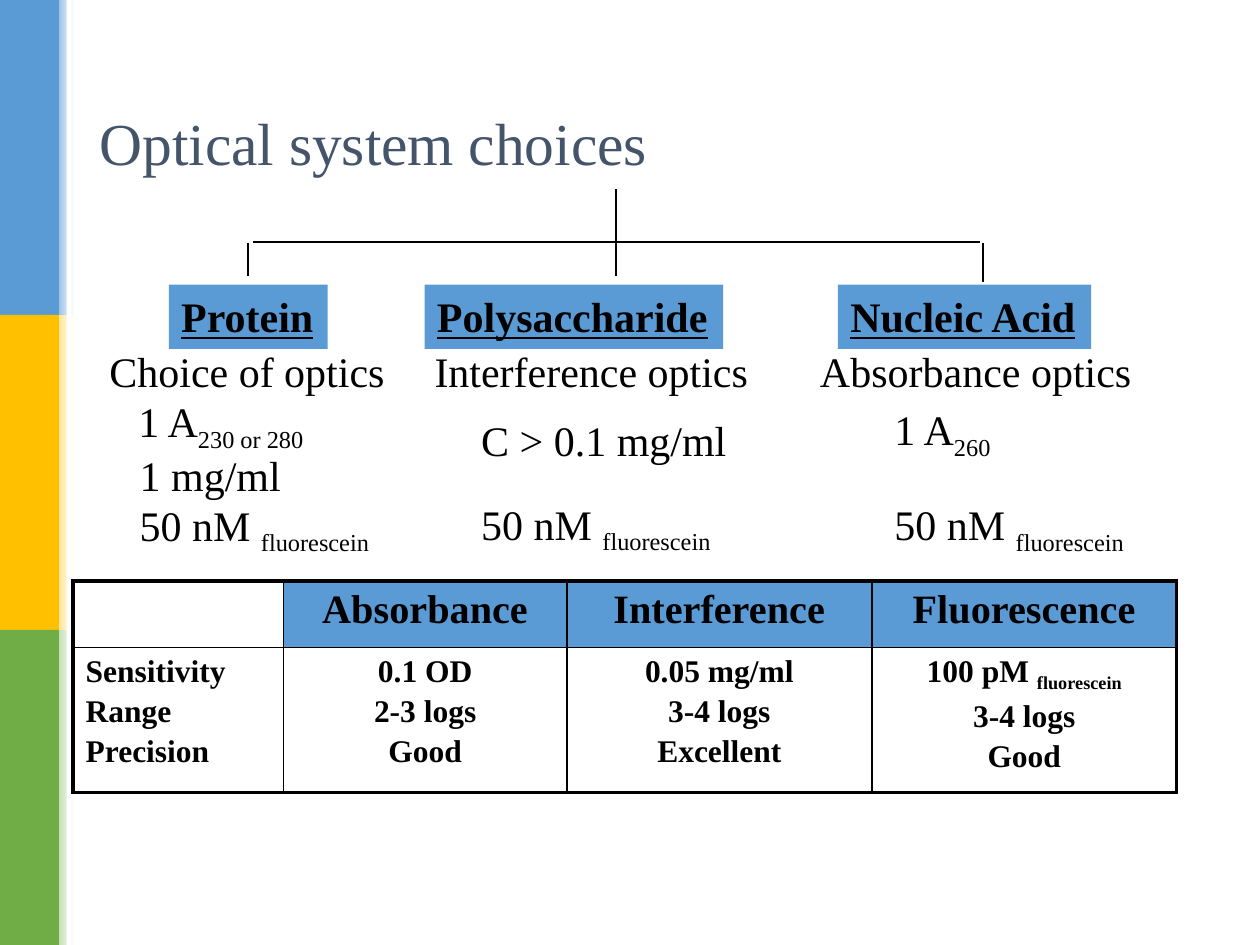
from lxml import etree
from pptx import Presentation
from pptx.dml.color import RGBColor
from pptx.enum import shapes, text
from pptx.oxml import ns

PX = 9144
FONT = "Times New Roman"
BLACK = RGBColor(0x00, 0x00, 0x00)
WHITE = RGBColor(0xFF, 0xFF, 0xFF)
SLATE = RGBColor(0x44, 0x54, 0x6A)
BLUE = RGBColor(0x5B, 0x9B, 0xD5)
YELLOW = RGBColor(0xFF, 0xC0, 0x00)
GREEN = RGBColor(0x70, 0xAD, 0x47)
PALE_BLUE = RGBColor(0x9D, 0xC3, 0xE6)
PALE_YELLOW = RGBColor(0xFF, 0xE6, 0x99)
PALE_GREEN = RGBColor(0xC5, 0xE0, 0xB4)


def write_lines(frame, lines, size, color=BLACK, bold=False, underline=False,
                align=text.PP_ALIGN.LEFT, spacing=1.0, gap=0):
    for index, line in enumerate(lines):
        paragraph = frame.add_paragraph() if index else frame.paragraphs[0]
        paragraph.alignment = align
        paragraph.line_spacing = spacing
        if index:
            paragraph.space_before = gap * 12700
        paragraph.font.name = FONT
        paragraph.font.size = size * 12700
        paragraph.font.bold = bold
        paragraph.font.underline = underline
        paragraph.font.color.rgb = color
        base, _, subscript = line.partition("_")
        paragraph.add_run().text = base
        if subscript:
            run = paragraph.add_run()
            run.text = subscript
            run.font._element.set("baseline", "-25000")


def add_box(left, top, width, height, fill=None):
    box = slide.shapes.add_shape(shapes.MSO_SHAPE.RECTANGLE,
                                 left * PX, top * PX, width * PX, height * PX)
    box.shadow.inherit = False
    box.line.fill.background()
    if fill is not None:
        box.fill.solid()
        box.fill.fore_color.rgb = fill
    return box


presentation = Presentation()
presentation.slide_width = 1000 * PX
presentation.slide_height = 750 * PX
slide = presentation.slides.add_slide(presentation.slide_layouts[5])

for row, (color, pale) in enumerate([(BLUE, PALE_BLUE), (YELLOW, PALE_YELLOW), (GREEN, PALE_GREEN)]):
    add_box(0, row * 250, 47, 250, color)
    fade = add_box(47, row * 250, 12, 250)
    fade.fill.gradient()
    fade.fill.gradient_angle = 0
    for stop, shade, position in zip(fade.fill.gradient_stops, (pale, WHITE), (0, 1)):
        stop.color.rgb = shade
        stop.position = position
add_box(53, 0, 4, 750, WHITE)

title = slide.shapes.title
title.left, title.top, title.width, title.height = 69 * PX, 40 * PX, 862 * PX, 145 * PX
title.text_frame.auto_size = text.MSO_AUTO_SIZE.NONE
title.text_frame.vertical_anchor = text.MSO_ANCHOR.MIDDLE
write_lines(title.text_frame, ["Optical system choices"], 34, SLATE)

branches = [
    (489, 150, 489, 200), (489, 200, 489, 219), (201, 192, 489, 192),
    (489, 192, 778, 192), (197, 193, 197, 219), (780, 193, 780, 224),
]
for ends in branches:
    connector = slide.shapes.add_connector(shapes.MSO_CONNECTOR.STRAIGHT, *[end * PX for end in ends])
    connector.line.color.rgb = BLACK
    connector.line.width = 12700
    etree.SubElement(connector._element.spPr, ns.qn("a:effectLst"))

for name, left, width in [("Protein", 134, 126), ("Polysaccharide", 337, 237), ("Nucleic Acid", 665, 201)]:
    heading = add_box(left, 226, width, 51, BLUE)
    heading.text_frame.word_wrap = False
    heading.text_frame.vertical_anchor = text.MSO_ANCHOR.TOP
    write_lines(heading.text_frame, [name], 24, bold=True, underline=True)

notes = [
    (77, 269, 241, 51, ["Choice of optics"], 1.0, 0),
    (335, 269, 271, 51, ["Interference optics"], 1.0, 0),
    (641, 269, 270, 51, ["Absorbance optics"], 1.0, 0),
    (100, 309, 165, 51, ["1 A_230 or 280"], 1.0, 0),
    (101, 356, 218, 83, ["1 mg/ml", "50 nM _fluorescein"], 0.9, 0),
    (372, 332, 218, 107, ["C > 0.1 mg/ml", "50 nM _fluorescein"], 0.8, 22),
    (700, 316, 218, 119, ["1 A_260", "50 nM _fluorescein"], 0.9, 25),
]
for left, top, width, height, lines, spacing, gap in notes:
    note = slide.shapes.add_textbox(left * PX, top * PX, width * PX, height * PX)
    note.text_frame.word_wrap = False
    write_lines(note.text_frame, lines, 24, spacing=spacing, gap=gap)

rows = [
    [[], ["Absorbance"], ["Interference"], ["Fluorescence"]],
    [["Sensitivity", "Range", "Precision"], ["0.1 OD", "2-3 logs", "Good"],
     ["0.05 mg/ml", "3-4 logs", "Excellent"], ["100 pM _fluorescein", "3-4 logs", "Good"]],
]
widths, heights = [167, 225, 242, 242], [53, 115]
table = slide.shapes.add_table(2, 4, 58 * PX, 461 * PX, sum(widths) * PX, sum(heights) * PX).table
table.first_row = table.horz_banding = False
for column, width in zip(table.columns, widths):
    column.width = width * PX
for r, cells in enumerate(rows):
    table.rows[r].height = heights[r] * PX
    for c, lines in enumerate(cells):
        cell = table.cell(r, c)
        if r == 0 and c > 0:
            cell.fill.solid()
            cell.fill.fore_color.rgb = BLUE
        else:
            cell.fill.background()
        align = text.PP_ALIGN.CENTER if c else text.PP_ALIGN.LEFT
        write_lines(cell.text_frame, lines, 18 if r else 23, bold=True, align=align, gap=3)
        properties = cell._tc.get_or_add_tcPr()
        outer_edges = [("a:lnL", c == 0), ("a:lnR", c == 3), ("a:lnT", r == 0), ("a:lnB", r == 1)]
        for index, (tag, outer) in enumerate(outer_edges):
            border = etree.Element(ns.qn(tag), w="28575" if outer else "12700")
            fill = etree.SubElement(border, ns.qn("a:solidFill"))
            etree.SubElement(fill, ns.qn("a:srgbClr"), val=str(BLACK))
            properties.insert(index, border)

presentation.save("out.pptx")
